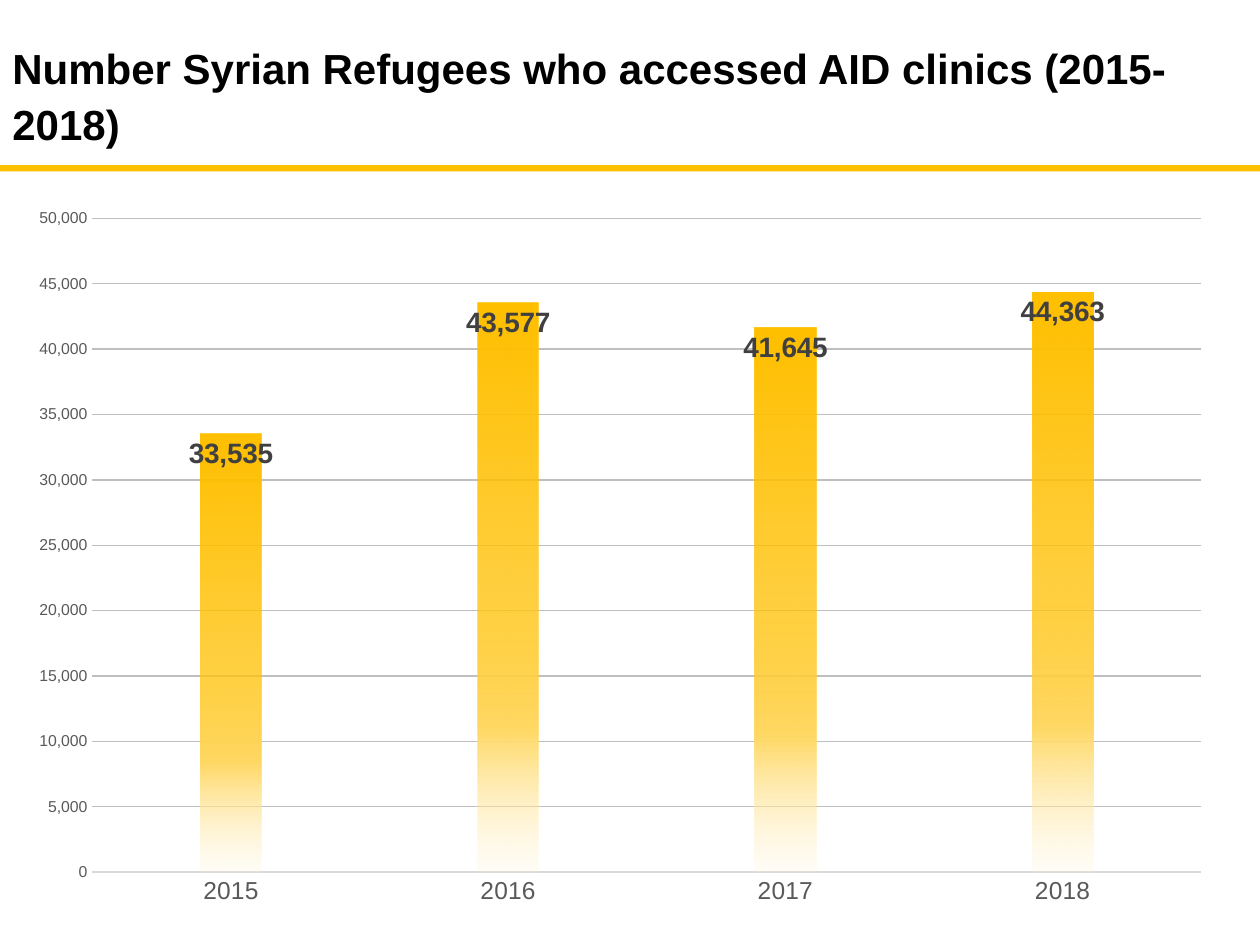
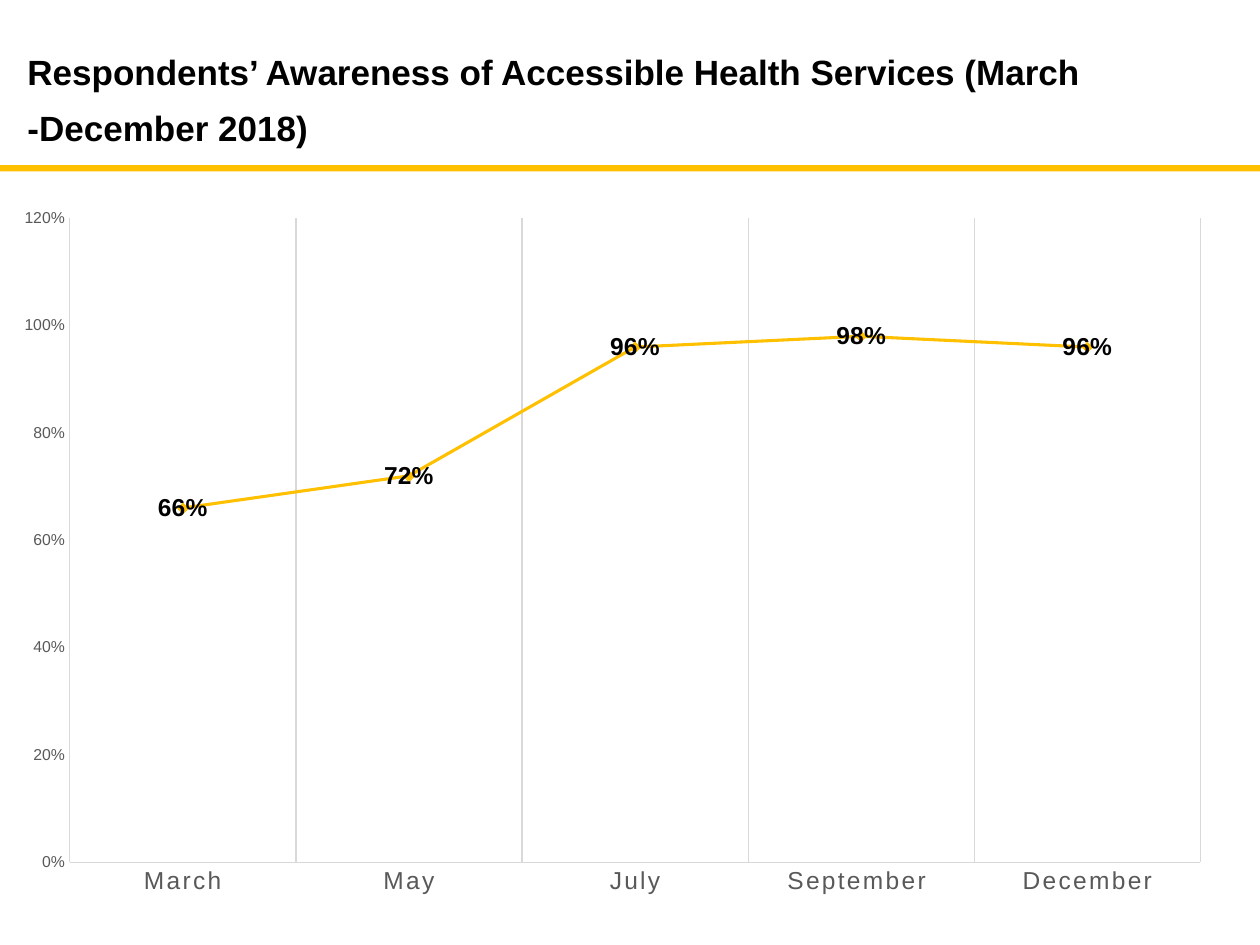
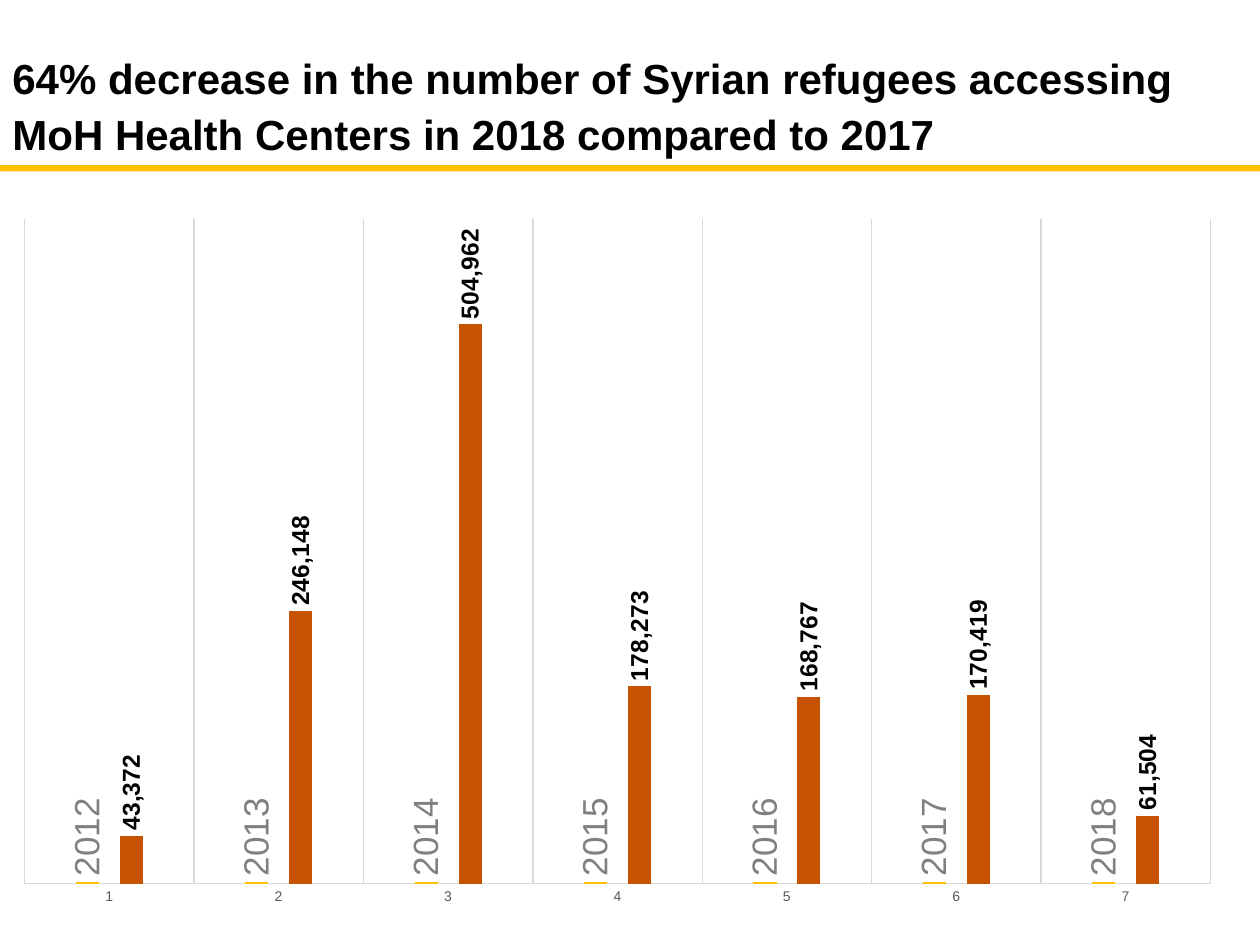
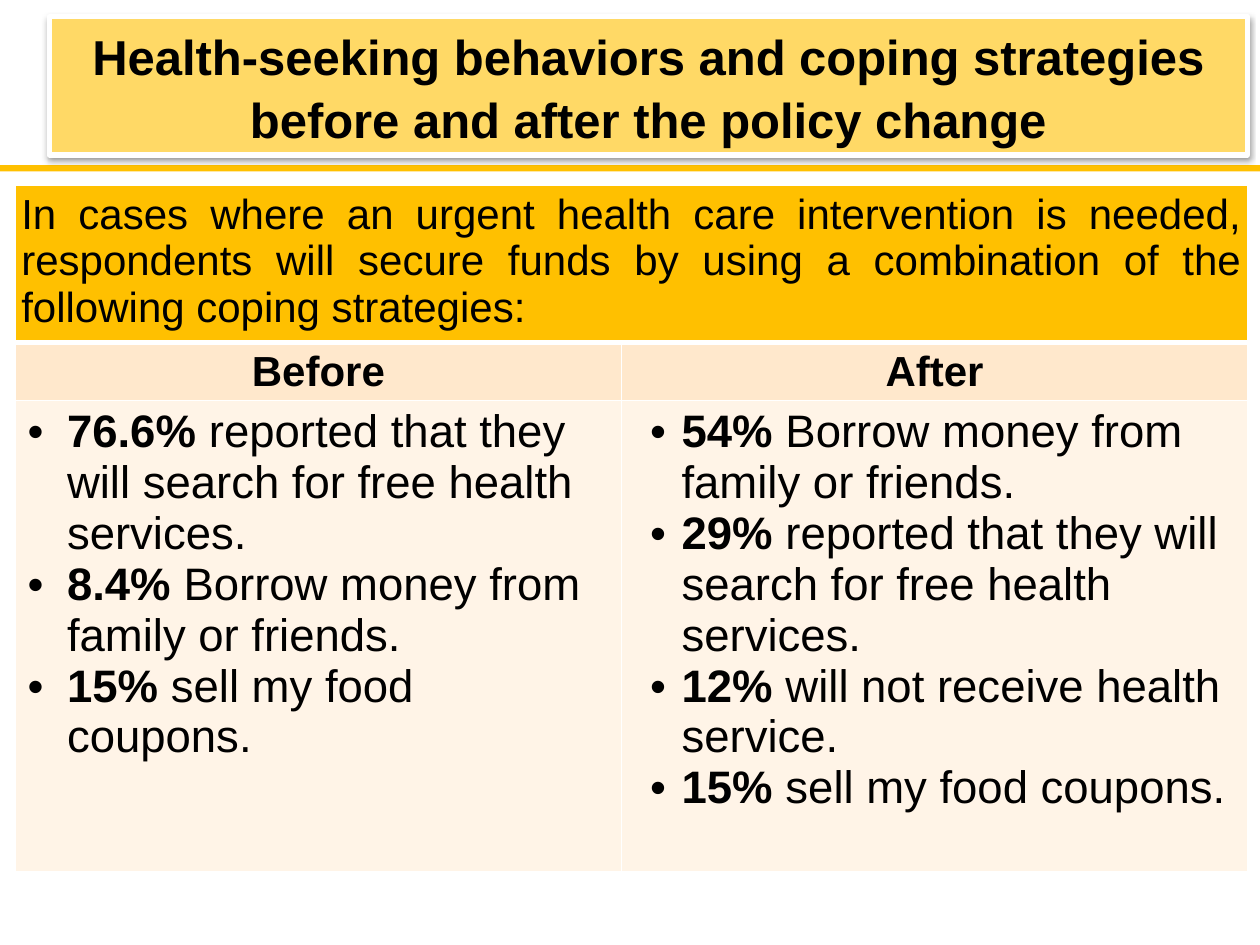
from lxml import etree
from pptx import Presentation
from pptx.chart.data import CategoryChartData
from pptx.dml.color import RGBColor
from pptx.enum.chart import XL_CHART_TYPE as ChartType
from pptx.enum.chart import XL_LABEL_POSITION as LabelPos
from pptx.enum.chart import XL_MARKER_STYLE as Marker
from pptx.enum.chart import XL_TICK_MARK as Tick
from pptx.enum.shapes import MSO_SHAPE as Shape
from pptx.enum.text import MSO_ANCHOR as Anchor
from pptx.enum.text import PP_ALIGN as Align
from pptx.oxml import parse_xml
from pptx.oxml.ns import nsdecls, qn
from pptx.util import Pt

FONT = "Arial"
COLORS = {
    "gold": "FFC000", "light_gold": "FFD966", "pale_gold": "FFF2CC",
    "orange": "C75200", "black": "000000", "white": "FFFFFF",
    "axis_text": "595959", "label_gray": "404040", "year_gray": "808080",
    "rule": "D9D9D9", "grid": "BFBFBF",
    "header_fill": "FFE8CC", "body_fill": "FFF4E7",
}
SLIDE_SIZE = (720, 540)
BAND = (0, 94.3, 720, 3.6)

# Gradient stops: position %, colour, opacity %
COLUMN_FADE = [(0, "gold", 100), (51, "gold", 75),
               (75, "light_gold", 100), (100, "pale_gold", 15)]

CHART_SLIDES = [
    {
        "title": "Number Syrian Refugees who accessed AID clinics (2015- 2018)",
        "title_at": (0, 15.1, 700, 73.4), "title_size": 24,
        "kind": ChartType.COLUMN_CLUSTERED, "at": (8.6, 111.3, 691.7, 414),
        "categories": ["2015", "2016", "2017", "2018"],
        "category_size": 14, "gap": 355, "overlap": -70,
        "value_axis": {"max": 50000, "step": 5000, "format": "#,##0",
                       "grid": "grid", "line": None},
        "series": [
            {"name": "Series 1", "values": [33535, 43577, 41645, 44363],
             "fade": COLUMN_FADE, "format": "#,##0", "size": 16,
             "color": "label_gray", "bold": True, "position": LabelPos.INSIDE_END},
        ],
    },
    {
        "title": "Respondents’ Awareness of Accessible Health Services (March -December 2018)",
        "title_at": (8.6, 15.1, 692, 73.4), "title_size": 20,
        "kind": ChartType.LINE_MARKERS_STACKED, "at": (0, 111.3, 700, 408.2),
        "categories": ["March", "May", "July", "September ", "December"],
        "category_size": 14, "category_grid": True, "letter_spacing": 120,
        "value_axis": {"max": 1.2, "step": 0.2, "format": "0%",
                       "grid": None, "line": "rule"},
        "series": [
            {"name": "Series 1", "values": [0.66, 0.72, 0.96, 0.98, 0.96],
             "line": "gold", "format": "0%", "size": 14,
             "color": "black", "bold": True, "position": LabelPos.CENTER},
        ],
    },
    {
        "title": "64% decrease in the number of Syrian refugees accessing "
                 "MoH Health Centers in 2018 compared to 2017",
        "title_at": (0, 20.9, 686, 73.4), "title_size": 24,
        "kind": ChartType.COLUMN_CLUSTERED, "at": (0, 116.9, 705.8, 408.2),
        "categories": ["1", "2", "3", "4", "5", "6", "7"],
        "category_size": 8, "category_grid": True, "gap": 444, "overlap": -90,
        "value_axis": {"max": 600000, "hidden": True},
        "series": [
            {"name": "Series 1", "values": list(range(2012, 2019)),
             "fill": "gold", "format": "General", "size": 20,
             "color": "year_gray", "bold": False, "upright": True,
             "position": LabelPos.OUTSIDE_END},
            {"name": "Series 2",
             "values": [43372, 246148, 504962, 178273, 168767, 170419, 61504],
             "fill": "orange", "format": "#,##0", "size": 14,
             "color": "black", "bold": True, "upright": True,
             "position": LabelPos.OUTSIDE_END},
        ],
    },
]

COPING = {
    "heading": "Health-seeking behaviors and coping strategies "
               "before and after the policy change",
    "heading_at": (28.1, 9.4, 684.7, 79.2),
    "intro": "In cases where an urgent health care intervention is needed, "
             "respondents will secure funds by using a combination of the "
             "following coping strategies:",
    "table_at": (8.6, 105.6),
    "row_heights": (87, 33.2, 269.2),
    "columns": [
        {"name": "Before", "width": 346.7, "indent": 22.5, "hanging": 22.5,
         "answers": [
             ("76.6% ", "reported that they will search for free health services."),
             ("8.4% ", "Borrow money from family or friends."),
             ("15% ", "sell my food coupons.")]},
        {"name": "After", "width": 357.5, "indent": 27, "hanging": 18,
         "answers": [
             ("54% ", "Borrow money from family or friends."),
             ("29% ", "reported that they will search for free health services."),
             ("12% ", "will not receive health service."),
             ("15% ", "sell my food coupons.")]},
    ],
}


def rgb(name):
    return RGBColor.from_string(COLORS[name])


def points(lengths):
    return [Pt(length) for length in lengths]


def style_font(font, size, color="black", bold=False):
    font.name, font.size, font.bold = FONT, Pt(size), bold
    font.color.rgb = rgb(color)


def style_line(line, color, width=0.75):
    if color is None:
        line.fill.background()
    else:
        line.color.rgb, line.width = rgb(color), Pt(width)


def add_box(slide, at, fill):
    box = slide.shapes.add_shape(Shape.RECTANGLE, *points(at))
    box.shadow.inherit = False
    box.fill.solid()
    box.fill.fore_color.rgb = rgb(fill)
    box.line.fill.background()
    return box


def add_banded_slide(deck):
    slide = deck.slides.add_slide(deck.slide_layouts[6])
    add_box(slide, BAND, "gold")
    return slide


def add_title(slide, text, at, size):
    frame = slide.shapes.add_textbox(*points(at)).text_frame
    frame.word_wrap = True
    frame.vertical_anchor = Anchor.BOTTOM
    frame.text = text
    frame.paragraphs[0].line_spacing = Pt(32)
    style_font(frame.paragraphs[0].runs[0].font, size, bold=True)


def fade_fill(series, stops):
    """Fill a series from top to bottom with partly transparent stops."""
    fill = series.format.fill
    fill.gradient()
    fill.gradient_angle = 270
    stop_list = series._element.find(".//" + qn("a:gsLst"))
    for stop in list(stop_list):
        stop_list.remove(stop)
    for position, color, opacity in stops:
        stop_list.append(parse_xml(
            f'<a:gs {nsdecls("a")} pos="{position * 1000}"><a:srgbClr val="{COLORS[color]}">'
            f'<a:alpha val="{opacity * 1000}"/></a:srgbClr></a:gs>'))


def style_series(series, look):
    if "fade" in look:
        fade_fill(series, look["fade"])
    elif "fill" in look:
        series.format.fill.solid()
        series.format.fill.fore_color.rgb = rgb(look["fill"])
    else:
        series.smooth = False
        style_line(series.format.line, look["line"], 1.75)
        series.marker.style, series.marker.size = Marker.DIAMOND, 6
        series.marker.format.fill.solid()
        series.marker.format.fill.fore_color.rgb = rgb(look["line"])
        series.marker.format.line.fill.background()

    labels = series.data_labels
    labels.show_value = True
    labels.position = look["position"]
    labels.number_format = look["format"]
    labels.number_format_is_linked = False
    style_font(labels.font, look["size"], look["color"], look["bold"])
    if look.get("upright"):
        body = labels._element.find(".//" + qn("a:bodyPr"))
        body.set("rot", "-5400000")
        body.set("vert", "horz")


def style_category_axis(axis, content):
    axis.major_tick_mark = axis.minor_tick_mark = Tick.NONE
    style_font(axis.tick_labels.font, content["category_size"], "axis_text")
    style_line(axis.format.line, "rule")
    axis.has_major_gridlines = content.get("category_grid", False)
    if axis.has_major_gridlines:
        style_line(axis.major_gridlines.format.line, "rule")
    if "letter_spacing" in content:
        run_defaults = axis._element.find(".//" + qn("a:defRPr"))
        run_defaults.set("spc", str(content["letter_spacing"]))


def style_value_axis(axis, look):
    axis.minimum_scale, axis.maximum_scale = 0, look["max"]
    axis.has_major_gridlines = bool(look.get("grid"))
    if look.get("hidden"):
        axis.visible = False
        return
    axis.major_unit = look["step"]
    axis.major_tick_mark = axis.minor_tick_mark = Tick.NONE
    axis.tick_labels.number_format = look["format"]
    axis.tick_labels.number_format_is_linked = False
    style_font(axis.tick_labels.font, 9, "axis_text")
    style_line(axis.format.line, look["line"])
    if look["grid"]:
        style_line(axis.major_gridlines.format.line, look["grid"])


def add_chart_slide(deck, content):
    slide = add_banded_slide(deck)
    add_title(slide, content["title"], content["title_at"], content["title_size"])

    figures = CategoryChartData()
    figures.categories = content["categories"]
    for look in content["series"]:
        figures.add_series(look["name"], look["values"])
    chart = slide.shapes.add_chart(
        content["kind"], *points(content["at"]), figures).chart
    chart.has_legend = chart.has_title = False
    style_font(chart.font, 10)

    plot = chart.plots[0]
    plot.vary_by_categories = False
    if "gap" in content:
        plot.gap_width, plot.overlap = content["gap"], content["overlap"]
    for series, look in zip(plot.series, content["series"]):
        style_series(series, look)
    style_category_axis(chart.category_axis, content)
    style_value_axis(chart.value_axis, content["value_axis"])


def add_heading_box(slide):
    box = add_box(slide, COPING["heading_at"], "light_gold")
    style_line(box.line, "white", 3)
    effects = box._element.spPr.find(qn("a:effectLst"))
    effects.append(parse_xml(
        f'<a:outerShdw {nsdecls("a")} blurRad="40000" dist="20000" dir="5400000" '
        f'rotWithShape="0"><a:srgbClr val="{COLORS["black"]}">'
        '<a:alpha val="38000"/></a:srgbClr></a:outerShdw>'))
    frame = box.text_frame
    frame.word_wrap = True
    frame.vertical_anchor = Anchor.MIDDLE
    frame.text = COPING["heading"]
    paragraph = frame.paragraphs[0]
    paragraph.alignment = Align.CENTER
    paragraph.line_spacing, paragraph.space_after = 1.07, Pt(8)
    style_font(paragraph.runs[0].font, 28, bold=True)


def style_cell(cell, fill, top=1, bottom=1):
    """Give a cell its fill and white borders of the given widths."""
    cell.fill.solid()
    cell.fill.fore_color.rgb = rgb(fill)
    properties = cell._tc.get_or_add_tcPr()
    sides = [("lnL", 1), ("lnR", 1), ("lnT", top), ("lnB", bottom)]
    for place, (side, width) in enumerate(sides):
        border = etree.Element(qn(f"a:{side}"), w=str(Pt(width)))
        solid = etree.SubElement(border, qn("a:solidFill"))
        etree.SubElement(solid, qn("a:srgbClr"), val=COLORS["white"])
        properties.insert(place, border)


def write_cell(cell, text, alignment, bold):
    cell.margin_bottom = Pt(0)
    cell.text_frame.text = text
    paragraph = cell.text_frame.paragraphs[0]
    paragraph.alignment = alignment
    style_font(paragraph.runs[0].font, 24, bold=bold)


def write_answers(frame, column):
    for number, (share, answer) in enumerate(column["answers"]):
        paragraph = frame.add_paragraph() if number else frame.paragraphs[0]
        for text, bold in ((share, True), (answer, False)):
            run = paragraph.add_run()
            run.text = text
            style_font(run.font, 26, bold=bold)
        properties = paragraph._p.get_or_add_pPr()
        properties.set("marL", str(Pt(column["indent"])))
        properties.set("indent", str(-Pt(column["hanging"])))
        etree.SubElement(properties, qn("a:buFont"), typeface=FONT)
        etree.SubElement(properties, qn("a:buChar"), char="•")


def add_coping_table(slide):
    columns, heights = COPING["columns"], COPING["row_heights"]
    size = (sum(column["width"] for column in columns), sum(heights))
    table = slide.shapes.add_table(
        len(heights), len(columns), *points(COPING["table_at"] + size)).table
    table.first_row = table.horz_banding = False
    for row, height in zip(table.rows, heights):
        row.height = Pt(height)

    intro = table.cell(0, 0)
    intro.merge(table.cell(0, len(columns) - 1))
    write_cell(intro, COPING["intro"], Align.JUSTIFY, False)
    intro.margin_left = intro.margin_right = Pt(3.6)

    for index, column in enumerate(columns):
        table.columns[index].width = Pt(column["width"])
        top, header, body = (table.cell(row, index) for row in range(3))
        style_cell(top, "gold", bottom=3)
        style_cell(header, "header_fill", top=3)
        style_cell(body, "body_fill")
        write_cell(header, column["name"], Align.CENTER, True)
        write_answers(body.text_frame, column)


def main():
    deck = Presentation()
    deck.slide_width, deck.slide_height = points(SLIDE_SIZE)
    for content in CHART_SLIDES:
        add_chart_slide(deck, content)
    coping_slide = add_banded_slide(deck)
    add_heading_box(coping_slide)
    add_coping_table(coping_slide)
    deck.save("out.pptx")


if __name__ == "__main__":
    main()
